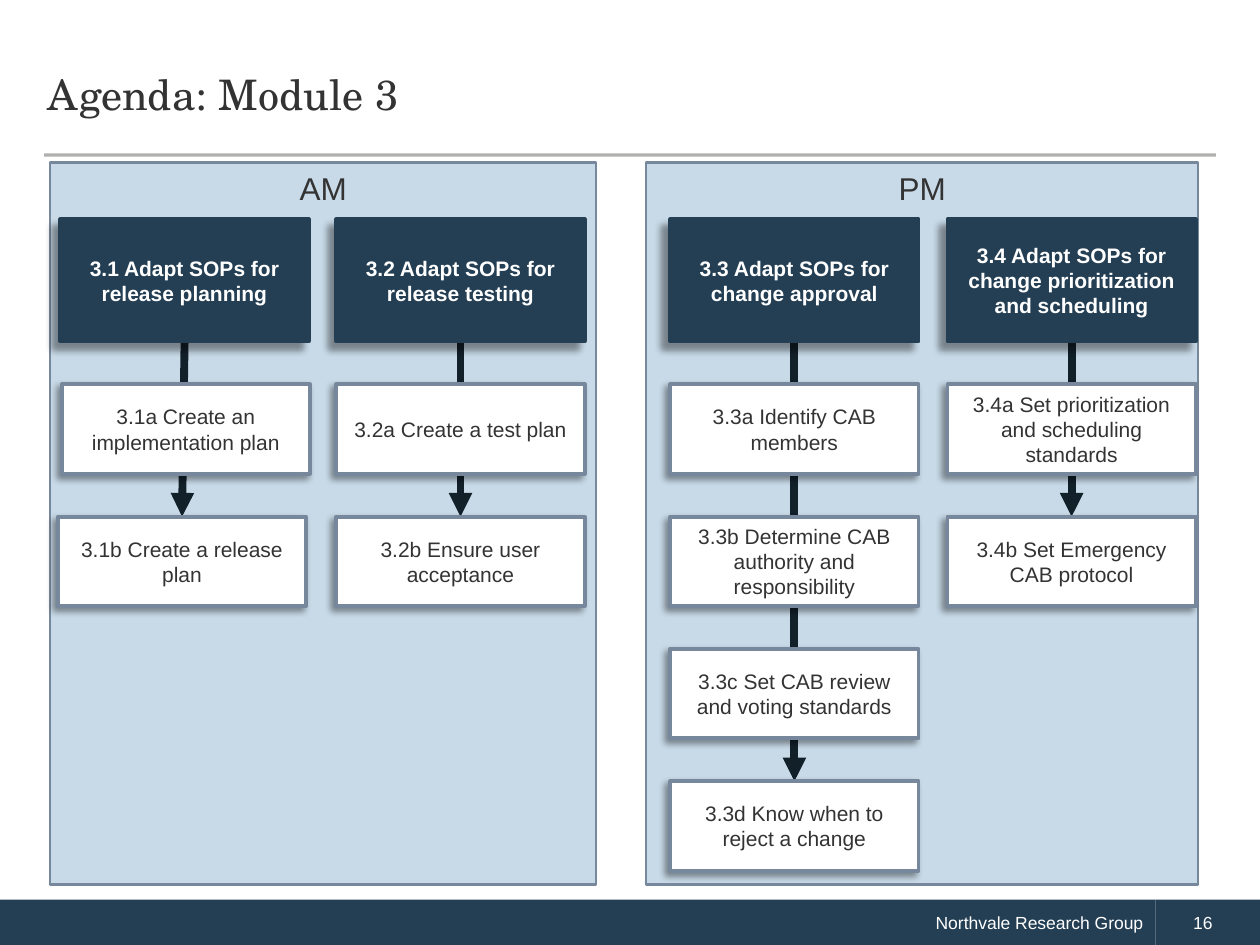
import pptx
import pptx.dml.color
import pptx.enum.shapes
import pptx.enum.text
import pptx.oxml
import pptx.oxml.ns
import pptx.util

Inches = pptx.util.Inches
Pt = pptx.util.Pt
RGBColor = pptx.dml.color.RGBColor
ALIGN = pptx.enum.text.PP_ALIGN
ANCHOR = pptx.enum.text.MSO_ANCHOR
qn = pptx.oxml.ns.qn

NAVY = RGBColor(0x24, 0x3F, 0x54)
INK = RGBColor(0x12, 0x20, 0x2A)
SLATE = RGBColor(0x78, 0x88, 0x9C)
PALE = RGBColor(0xC8, 0xDA, 0xE8)
WHITE = RGBColor(0xFF, 0xFF, 0xFF)
TEXT = RGBColor(0x33, 0x33, 0x33)
RULE = RGBColor(0x45, 0x43, 0x3E)

BOX_WIDTH = 1.97
HEADER_TOP, HEADER_HEIGHT = 1.74, 0.97
STEP_TOP, STEP_HEIGHT, STEP_PITCH = 3.05, 0.71, 1.05

# Text, left, width
PANELS = [("AM", 0.4, 4.33), ("PM", 5.13, 4.38)]

# Heading, left of the heading, (step, left of the step)
TRACKS = [
    ("3.1 Adapt SOPs for release planning", 0.48,
     [("3.1a Create an implementation plan", 0.49),
      ("3.1b Create a release plan", 0.46)]),
    ("3.2 Adapt SOPs for release testing", 2.67,
     [("3.2a Create a test plan", 2.67),
      ("3.2b Ensure user acceptance", 2.67)]),
    ("3.3 Adapt SOPs for change approval", 5.32,
     [("3.3a Identify CAB members", 5.32),
      ("3.3b Determine CAB authority and responsibility", 5.32),
      ("3.3c Set CAB review and voting standards", 5.32),
      ("3.3d Know when to reject a change", 5.32)]),
    ("3.4 Adapt SOPs for change prioritization and scheduling", 7.52,
     [("3.4a Set prioritization and scheduling standards", 7.52),
      ("3.4b Set Emergency CAB protocol", 7.52)]),
]

HEADER_STYLE = {"fill": NAVY, "line": NAVY, "width": 2.25, "shadow": 6,
                "font": {"size": Pt(12), "bold": True}, "ink": WHITE}
STEP_STYLE = {"fill": WHITE, "line": SLATE, "width": 2.25, "shadow": 3,
              "font": {"size": Pt(12)}, "ink": TEXT}
PANEL_STYLE = {"fill": PALE, "line": SLATE, "width": 1.25, "anchor": ANCHOR.TOP,
               "font": {"size": Pt(18)}, "ink": TEXT}
FOOTER_STYLE = {"fill": NAVY, "font": {"size": Pt(10)}, "ink": WHITE}


def write(frame, text, font, ink, align):
    frame.text = text
    paragraph = frame.paragraphs[0]
    paragraph.alignment = align
    for name, value in {"name": "Arial", **font}.items():
        setattr(paragraph.runs[0].font, name, value)
    paragraph.runs[0].font.color.rgb = ink
    return paragraph


def add_shadow(box, distance):
    effects = box._element.spPr.find(qn("a:effectLst"))
    effects.append(pptx.oxml.parse_xml(
        '<a:outerShdw xmlns:a="http://schemas.openxmlformats.org/drawingml/2006/main" '
        f'blurRad="{Pt(4)}" dist="{Pt(distance)}" dir="8100000" algn="tr" rotWithShape="0">'
        '<a:srgbClr val="000000"><a:alpha val="40000"/></a:srgbClr></a:outerShdw>'))


def add_box(slide, text, left, top, width, height, style, align=ALIGN.CENTER):
    box = slide.shapes.add_shape(
        pptx.enum.shapes.MSO_SHAPE.RECTANGLE,
        Inches(left), Inches(top), Inches(width), Inches(height))
    box.fill.solid()
    box.fill.fore_color.rgb = style["fill"]
    if "line" in style:
        box.line.color.rgb = style["line"]
        box.line.width = Pt(style["width"])
    else:
        box.line.fill.background()
    box.shadow.inherit = False
    if "shadow" in style:
        add_shadow(box, style["shadow"])
    box.text_frame.word_wrap = True
    box.text_frame.vertical_anchor = style.get("anchor", ANCHOR.MIDDLE)
    write(box.text_frame, text, style["font"], style["ink"], align)
    return box


def add_line(slide, start, end, color, width):
    line = slide.shapes.add_connector(
        pptx.enum.shapes.MSO_CONNECTOR.STRAIGHT,
        *(Inches(value) for value in (*start, *end)))
    line.line.color.rgb = color
    line.line.width = Pt(width)
    properties = line._element.spPr
    properties.append(properties.makeelement(qn("a:effectLst"), {}))
    return line


def add_title(slide):
    title = slide.shapes.title
    place = {"left": 0.28, "top": 0.29, "width": 9.43, "height": 0.94}
    for name, value in place.items():
        setattr(title, name, Inches(value))
    title.text_frame.vertical_anchor = ANCHOR.MIDDLE
    title.text_frame.auto_size = pptx.enum.text.MSO_AUTO_SIZE.NONE
    paragraph = write(title.text_frame, "Agenda: Module 3",
                      {"name": "TeX Gyre Schola", "size": Pt(24)}, TEXT, ALIGN.LEFT)
    paragraph.line_spacing = Pt(26)


def add_rule(slide):
    rule = add_line(slide, (0.35, 1.23), (9.65, 1.23), RULE, 1.75)
    color = rule._element.spPr.find(".//" + qn("a:srgbClr"))
    color.append(color.makeelement(qn("a:alpha"), {"val": "42000"}))


def add_footer(slide):
    add_box(slide, "Northvale Research Group", 0, 7.14, 9.17, 0.37,
            FOOTER_STYLE, ALIGN.RIGHT)
    number = add_box(slide, "16", 9.17, 7.14, 0.83, 0.37, FOOTER_STYLE, ALIGN.LEFT)
    number.text_frame.margin_left = Inches(0.3)


def add_flow_arrow(slide):
    arrow = add_line(slide, (0, 0), (0, 0), INK, 4.5)
    outline = arrow._element.spPr.find(qn("a:ln"))
    outline.append(outline.makeelement(qn("a:tailEnd"), {"type": "triangle"}))
    return arrow


def add_track(slide, heading, left, steps):
    # The arrow comes first so that it runs behind the steps in between
    arrow = add_flow_arrow(slide)
    header = add_box(slide, heading, left, HEADER_TOP, BOX_WIDTH, HEADER_HEIGHT,
                     HEADER_STYLE)
    for row, (text, step_left) in enumerate(steps):
        step = add_box(slide, text, step_left, STEP_TOP + row * STEP_PITCH,
                       BOX_WIDTH, STEP_HEIGHT, STEP_STYLE)
    arrow.begin_connect(header, 2)
    arrow.end_connect(step, 0)


def main():
    deck = pptx.Presentation()
    deck.slide_width, deck.slide_height = Inches(10), Inches(7.5)
    slide = deck.slides.add_slide(deck.slide_layouts[5])

    # Frame of the slide
    add_footer(slide)
    add_rule(slide)
    add_title(slide)

    # Half-day panels
    for text, left, width in PANELS:
        add_box(slide, text, left, 1.29, width, 5.73, PANEL_STYLE)

    # Tracks of steps
    for heading, left, steps in TRACKS:
        add_track(slide, heading, left, steps)

    deck.save("out.pptx")


if __name__ == "__main__":
    main()
